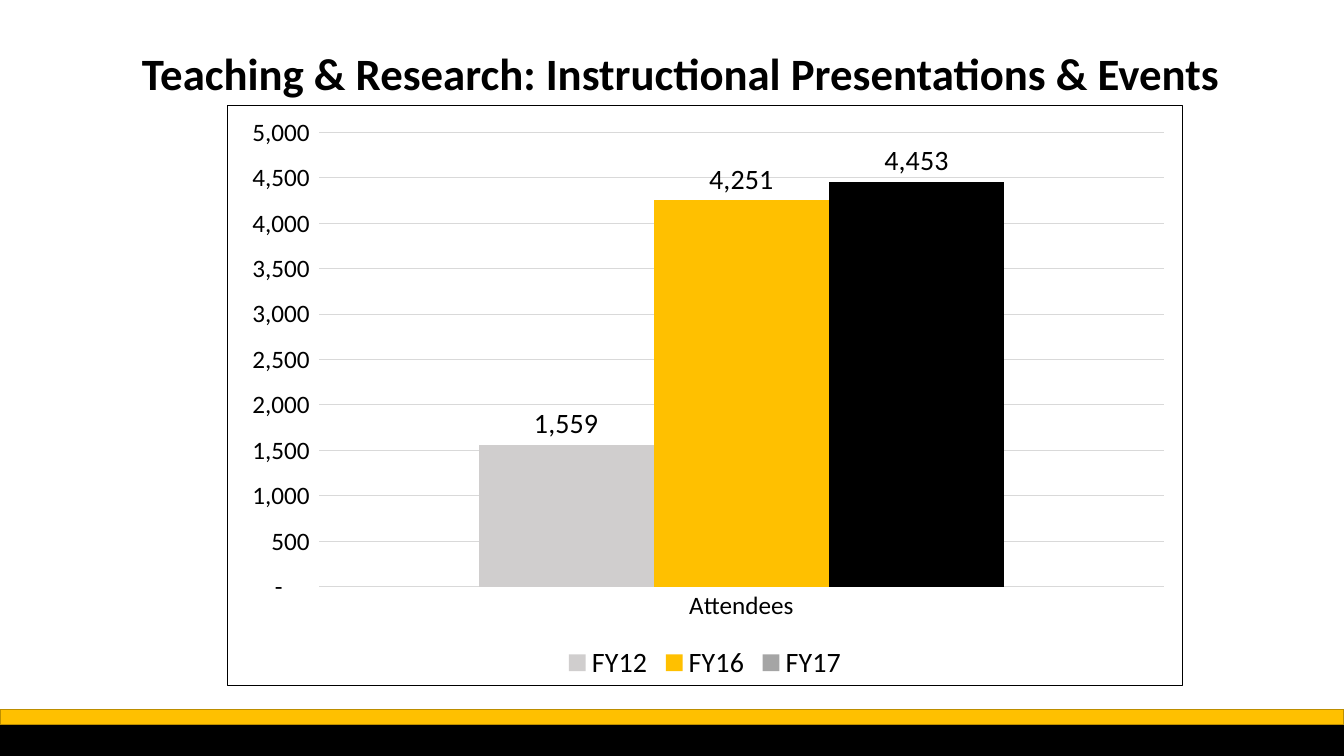
from dataclasses import dataclass

from lxml.etree import fromstring
from pptx import Presentation
from pptx.chart.chart import Chart
from pptx.chart.data import CategoryChartData
from pptx.dml.color import RGBColor
from pptx.dml.fill import FillFormat
from pptx.dml.line import LineFormat
from pptx.enum.chart import (XL_CHART_TYPE, XL_LABEL_POSITION,
                             XL_LEGEND_POSITION, XL_TICK_MARK)
from pptx.enum.shapes import MSO_SHAPE
from pptx.enum.text import MSO_AUTO_SIZE
from pptx.slide import Slide
from pptx.text.text import Font
from pptx.util import Pt

SLIDE_WIDTH, SLIDE_HEIGHT = 960, 540
FONT_NAME = "Calibri"
BLACK, WHITE, GOLD, GRID_GRAY = "000000", "FFFFFF", "FFC000", "D9D9D9"
COUNT_FORMAT = r'_(* #,##0_);_(* \(#,##0\);_(* "-"??_);_(@_)'


@dataclass
class Band:
    top: float
    height: float
    fill: str
    outline: str


@dataclass
class FiscalYear:
    name: str
    attendees: int
    legend_color: str
    bar_color: str


FOOTER_BANDS = [
    Band(511.9, 28.1, BLACK, BLACK),
    Band(506.9, 10.8, GOLD, "BD8E00"),
]
FISCAL_YEARS = [
    FiscalYear("FY12", 1559, "D0CECE", "D0CECE"),
    FiscalYear("FY16", 4251, GOLD, GOLD),
    FiscalYear("FY17", 4453, "A5A5A5", BLACK),
]


def rgb(color: str) -> RGBColor:
    return RGBColor.from_string(color)


def paint(fill: FillFormat, color: str) -> None:
    fill.solid()
    fill.fore_color.rgb = rgb(color)


def stroke(line: LineFormat, color: str, width: float) -> None:
    paint(line.fill, color)
    line.width = Pt(width)


def style_font(font: Font, size: float, bold: bool = False) -> None:
    font.name = FONT_NAME
    font.size = Pt(size)
    font.bold = bold
    font.color.rgb = rgb(BLACK)


def draw_band(slide: Slide, band: Band) -> None:
    strip = slide.shapes.add_shape(MSO_SHAPE.RECTANGLE, Pt(0), Pt(band.top),
                                   Pt(SLIDE_WIDTH), Pt(band.height))
    strip.shadow.inherit = False
    paint(strip.fill, band.fill)
    stroke(strip.line, band.outline, 1)


def draw_title(slide: Slide, wording: str) -> None:
    title = slide.shapes.add_textbox(Pt(94.3), Pt(28.8), Pt(791.3), Pt(46.1))
    frame = title.text_frame
    frame.word_wrap = False
    frame.auto_size = MSO_AUTO_SIZE.SHAPE_TO_FIT_TEXT
    run = frame.paragraphs[0].add_run()
    run.text = wording
    style_font(run.font, 32, bold=True)


def frame_chart(chart: Chart) -> None:
    """Give the chart area a white fill and a thin black border."""
    chart_part = chart._chartSpace.chart
    chart_part.addnext(fromstring(
        f'<c:spPr xmlns:c="{chart_part.nsmap["c"]}"'
        ' xmlns:a="http://schemas.openxmlformats.org/drawingml/2006/main">'
        f'<a:solidFill><a:srgbClr val="{WHITE}"/></a:solidFill>'
        f'<a:ln w="{Pt(1)}"><a:solidFill><a:srgbClr val="{BLACK}"/>'
        '</a:solidFill></a:ln></c:spPr>'))


def style_axes(chart: Chart) -> None:
    for axis in (chart.category_axis, chart.value_axis):
        axis.major_tick_mark = axis.minor_tick_mark = XL_TICK_MARK.NONE
        style_font(axis.tick_labels.font, 18)
    stroke(chart.category_axis.format.line, GRID_GRAY, 0.75)

    counts = chart.value_axis
    counts.minimum_scale, counts.maximum_scale = 0, 5000
    counts.major_unit = 500
    counts.format.line.fill.background()
    stroke(counts.major_gridlines.format.line, GRID_GRAY, 0.75)
    counts.tick_labels.number_format = COUNT_FORMAT
    counts.tick_labels.number_format_is_linked = False


def draw_attendance(slide: Slide, years: list[FiscalYear]) -> None:
    attendance = CategoryChartData(number_format=COUNT_FORMAT)
    attendance.categories = ["Attendees"]
    for year in years:
        attendance.add_series(year.name, [year.attendees])
    chart = slide.shapes.add_chart(
        XL_CHART_TYPE.COLUMN_CLUSTERED, Pt(162), Pt(74.9), Pt(683.3),
        Pt(415.4), attendance).chart
    chart.has_title = False
    style_font(chart.font, 10)
    frame_chart(chart)
    style_axes(chart)

    # Legend
    chart.has_legend = True
    chart.legend.position = XL_LEGEND_POSITION.BOTTOM
    chart.legend.include_in_layout = False
    style_font(chart.legend.font, 20)

    # Bars and their values
    bars = chart.plots[0]
    bars.gap_width = 182
    bars.overlap = 0
    bars.vary_by_categories = False
    for year, series in zip(years, bars.series):
        series.invert_if_negative = False
        paint(series.format.fill, year.legend_color)
        if year.bar_color != year.legend_color:
            paint(series.points[0].format.fill, year.bar_color)
        labels = series.data_labels
        labels.show_value = True
        labels.position = XL_LABEL_POSITION.OUTSIDE_END
        labels.number_format = COUNT_FORMAT
        labels.number_format_is_linked = False
        style_font(labels.font, 20)


def main() -> None:
    deck = Presentation()
    deck.slide_width, deck.slide_height = Pt(SLIDE_WIDTH), Pt(SLIDE_HEIGHT)
    slide = deck.slides.add_slide(deck.slide_layouts[6])
    for band in FOOTER_BANDS:
        draw_band(slide, band)
    draw_title(slide,
               "Teaching & Research: Instructional Presentations & Events")
    draw_attendance(slide, FISCAL_YEARS)
    deck.save("out.pptx")


if __name__ == "__main__":
    main()
